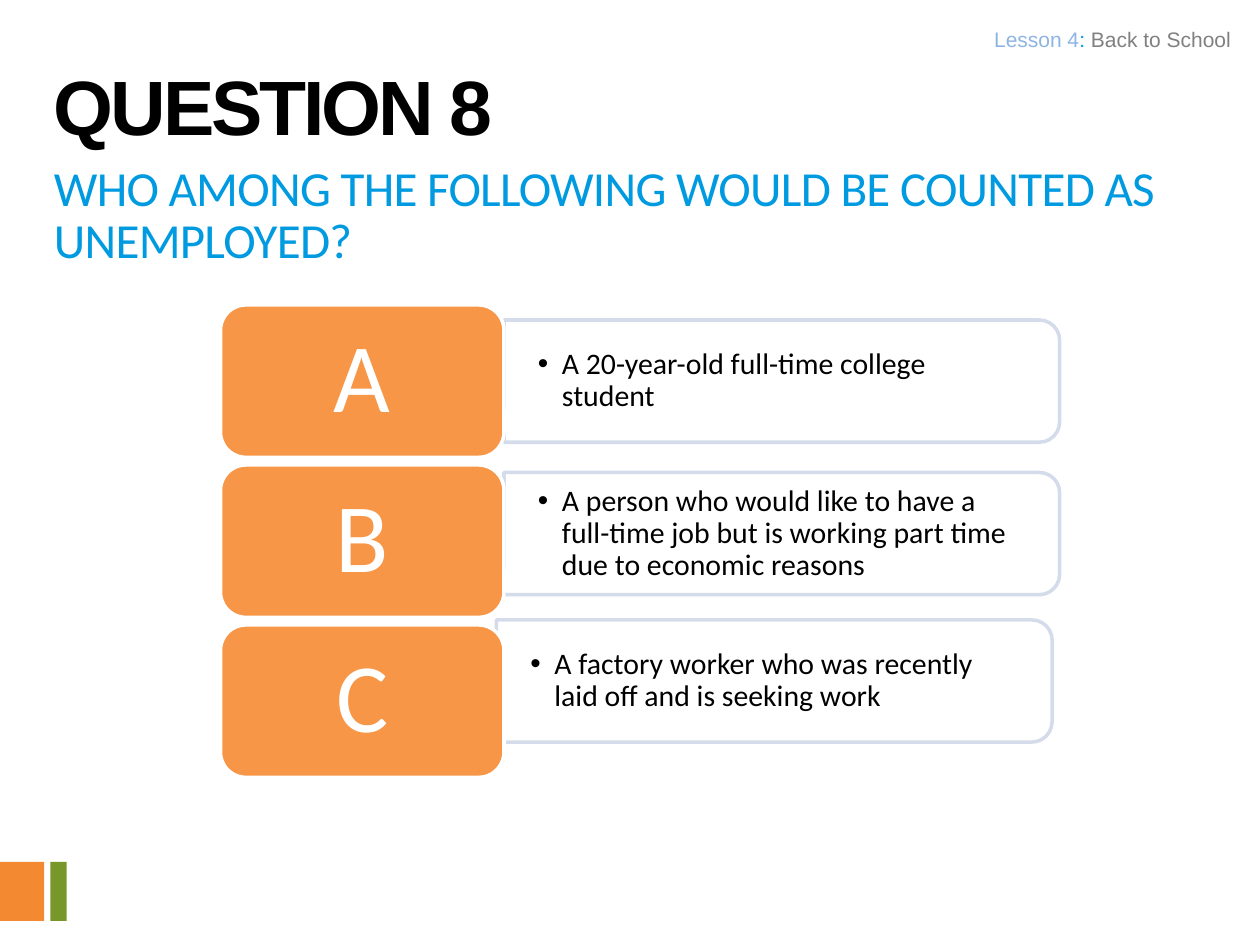
from pptx import Presentation
from pptx import util as u
from pptx.dml.color import RGBColor
from pptx.enum import shapes, text
from pptx.oxml.ns import qn
from lxml import etree

ORANGE = RGBColor(0xF7, 0x96, 0x46)
FOOT_ORANGE = RGBColor(0xF3, 0x8A, 0x31)
GREEN = RGBColor(0x77, 0x97, 0x2B)
BLUE = RGBColor(0x00, 0x9A, 0xE1)
PALE_BLUE = RGBColor(0x8E, 0xB4, 0xE3)
EDGE = RGBColor(0xD0, 0xD8, 0xE8)
GREY = RGBColor(0x80, 0x80, 0x80)
WHITE = RGBColor(0xFF, 0xFF, 0xFF)
BLACK = RGBColor(0, 0, 0)

TITLE = "QUESTION 8"
QUESTION = "WHO AMONG THE FOLLOWING WOULD BE COUNTED AS UNEMPLOYED?"
HEADER = [("Lesson 4", PALE_BLUE), (": ", BLUE), ("Back to School", GREY)]
# letter, answer, left and top of the answer panel
ANSWERS = [
    ("A", "A 20-year-old full-time college student", 4, 2.54),
    ("B", "A person who would like to have a full-time job but is working "
          "part time due to economic reasons", 4, 3.75),
    ("C", "A factory worker who was recently laid off and is seeking work",
     3.94, 4.92),
]
FOOTER_BARS = [(0, 0.35, FOOT_ORANGE), (0.4, 0.13, GREEN)]  # left, width, fill
CARD_LEFT, CARD_TOP, CARD_W, CARD_H, CARD_STEP = 1.75, 2.42, 2.25, 1.21, 1.27
PANEL_W, PANEL_H = 4.41, 0.97

prs = Presentation()
prs.slide_width, prs.slide_height = u.Inches(10), u.Inches(7.5)
slide = prs.slides.add_slide(prs.slide_layouts[6])


def add_shape(kind, box, fill, line=None):
    sp = slide.shapes.add_shape(kind, *map(u.Inches, box))
    sp.shadow.inherit = False
    sp.fill.solid()
    sp.fill.fore_color.rgb = fill
    if line is None:
        sp.line.fill.background()
    else:
        sp.line.color.rgb = line
        sp.line.width = u.Pt(2)
    return sp


def add_textbox(box):
    return slide.shapes.add_textbox(*map(u.Inches, box))


def write(sp, runs, size, font="Calibri", bold=False, spc=None, insets=None,
          anchor=text.MSO_ANCHOR.TOP, bullet=False, **para):
    """Fill a shape with one paragraph of (text, colour) runs."""
    tf = sp.text_frame
    tf.word_wrap = True
    tf.vertical_anchor = anchor
    if insets:
        tf.margin_left = tf.margin_right = u.Inches(insets[0])
        tf.margin_top = tf.margin_bottom = u.Inches(insets[1])
    p = tf.paragraphs[0]
    for name, value in para.items():
        setattr(p, name, value)
    if bullet:
        pPr = p._p.get_or_add_pPr()
        indent = u.Inches(0.19)
        pPr.set("marL", str(indent))
        pPr.set("indent", str(-indent))
        etree.SubElement(pPr, qn("a:buFont")).set("typeface", "Arial")
        etree.SubElement(pPr, qn("a:buChar")).set("char", "•")
    for words, color in runs:
        r = p.add_run()
        r.text = words
        for name, value in {"size": u.Pt(size), "name": font, "bold": bold}.items():
            setattr(r.font, name, value)
        r.font.color.rgb = color
        if spc:
            r._r.get_or_add_rPr().set("spc", str(spc))


def set_alpha(sp, percent):
    """Make the fill and the line of a shape partly transparent."""
    for color in sp._element.spPr.iter(qn("a:srgbClr")):
        etree.SubElement(color, qn("a:alpha")).set("val", str(percent * 1000))


for left, width, fill in FOOTER_BARS:
    add_shape(shapes.MSO_SHAPE.RECTANGLE, (left, 6.84, width, 0.47), fill)

write(add_textbox((0.33, 1.25, 9.5, 1)), [(QUESTION, BLUE)], 28, spc=-40,
      line_spacing=0.9)

for row, (letter, answer, left, top) in enumerate(ANSWERS):
    # The panel is a top-rounded rectangle turned so its round end faces right.
    shift = (PANEL_W - PANEL_H) / 2
    panel = add_shape(shapes.MSO_SHAPE.ROUND_2_SAME_RECTANGLE,
                      (left + shift, top - shift, PANEL_H, PANEL_W), WHITE, EDGE)
    panel.rotation = 90
    set_alpha(panel, 90)
    write(add_textbox((left, top + 0.05, 4.37, 0.87)), [(answer, BLACK)], 17,
          insets=(0.27, 0.14), anchor=text.MSO_ANCHOR.MIDDLE, bullet=True,
          line_spacing=0.9)
    card = add_shape(shapes.MSO_SHAPE.ROUNDED_RECTANGLE,
                     (CARD_LEFT, CARD_TOP + row * CARD_STEP, CARD_W, CARD_H),
                     ORANGE, WHITE)
    write(card, [(letter, WHITE)], 56, insets=(0.23, 0.12),
          anchor=text.MSO_ANCHOR.MIDDLE, line_spacing=0.9,
          alignment=text.PP_ALIGN.CENTER)

write(add_textbox((4, 0.17, 5.85, 0.32)), HEADER, 12, "Arial",
      insets=(0.08, 0.04), alignment=text.PP_ALIGN.RIGHT)
write(add_textbox((0.33, 0.33, 8.66, 0.83)), [(TITLE, BLACK)], 44, "Arial",
      bold=True, spc=-180, line_spacing=u.Pt(59))

prs.save("out.pptx")
